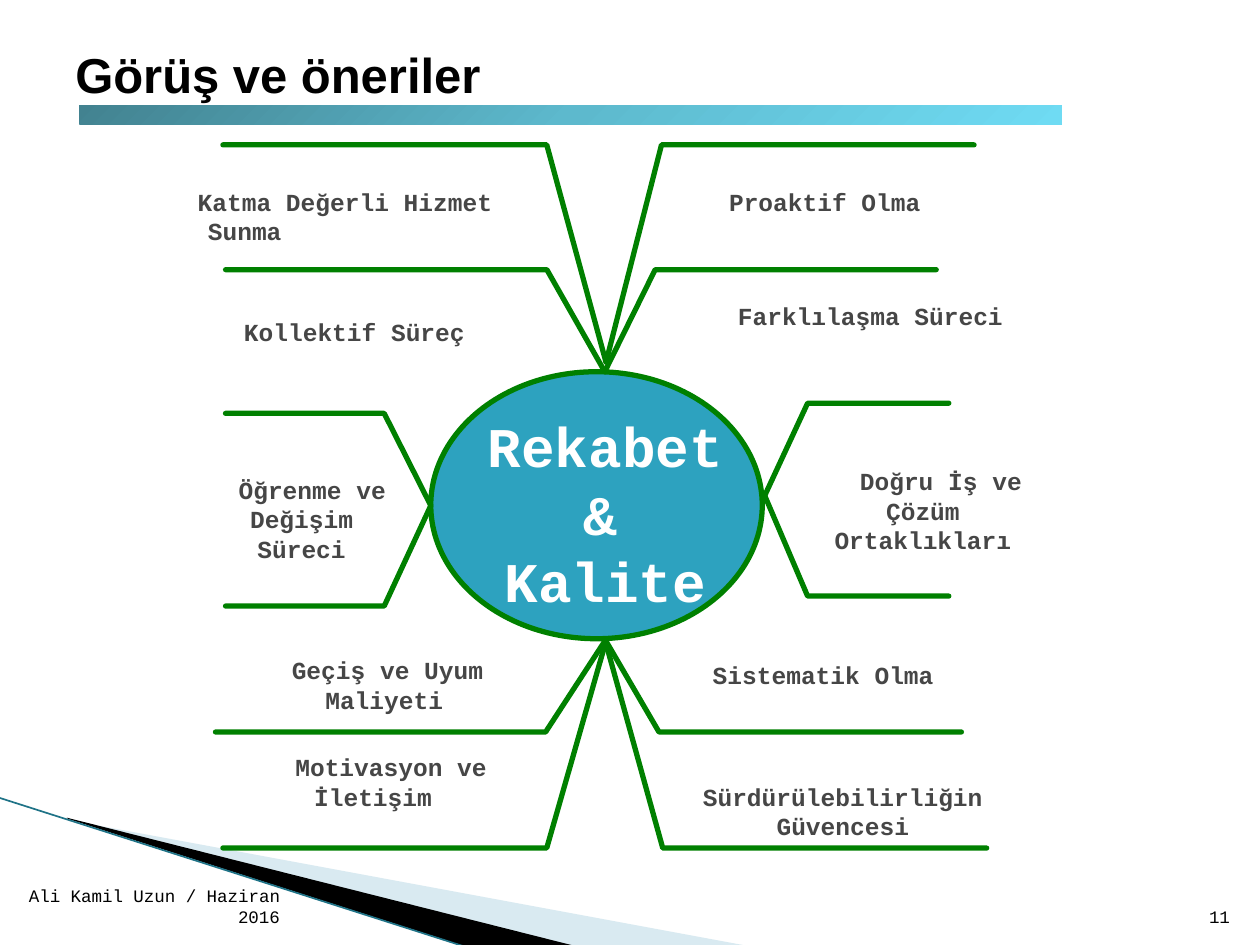
from copy import deepcopy

from pptx import Presentation
from pptx.dml.color import RGBColor
from pptx.enum.shapes import MSO_CONNECTOR, MSO_SHAPE
from pptx.enum.text import MSO_ANCHOR, PP_ALIGN
from pptx.oxml.ns import qn
from pptx.util import Pt
from lxml import etree

GREEN = "008000"
MONO = "Courier New"
HANGING = 13
LEFT, CENTER, RIGHT = PP_ALIGN.LEFT, PP_ALIGN.CENTER, PP_ALIGN.RIGHT

# Point at the hub, elbow, outer end of the horizontal arm
BRANCHES = [
    ((346.3, 206.9), (312.5, 82.8), 127.4),
    ((346.3, 206.9), (378, 82.8), 556.6),
    ((345.6, 212.4), (312.5, 154.1), 128.9),
    ((345.6, 212.4), (374.4, 154.1), 535),
    ((246.2, 288.9), (219.6, 236.2), 128.9),
    ((246.2, 288.9), (219.6, 346.3), 128.9),
    ((437, 283.2), (461.5, 230.4), 542.2),
    ((437, 283.2), (461.5, 340.6), 542.2),
    ((346, 365.8), (311.8, 418.3), 123.1),
    ((346, 365.8), (376.6, 418.3), 549.4),
    ((346.3, 366.5), (312.5, 484.6), 127.4),
    ((346.3, 367.9), (378.7, 484.6), 563.8),
]

# Text, box, alignment, start of the first line
LABELS = [
    ("Katma Değerli Hizmet Sunma", (105.8, 106.6, 222.5, 31.7), LEFT, 7.2),
    ("Proaktif Olma", (408.2, 106.6, 200.9, 31.7), LEFT, 8.4),
    ("Kollektif Süreç", (131, 181.4, 200.9, 31.7), LEFT, 8.4),
    ("Farklılaşma Süreci", (386.6, 172.1, 196.6, 26.6), CENTER, 25.2),
    ("Öğrenme ve\vDeğişim Süreci", (105.8, 271.4, 120.2, 26.6), CENTER, 25.2),
    ("Doğru İş ve Çözüm Ortaklıkları", (443.5, 266.4, 154.8, 35.3), CENTER, 33.6),
    ("Geçiş ve Uyum\vMaliyeti", (105.8, 374.4, 214.6, 26.6), CENTER, 16.8),
    ("Sistematik Olma", (398.9, 377.3, 187.2, 26.6), LEFT, 8.4),
    ("Motivasyon ve İletişim", (99.4, 429.8, 214.6, 26.6), CENTER, 33.6),
    ("Sürdürülebilirliğin Güvencesi", (381.6, 446.6, 187.2, 26.6), CENTER, HANGING),
]


def color(hex_string):
    return RGBColor.from_string(hex_string)


def add_text(slide, text, box, size, font=MONO, hex_color="000000", bold=False,
             align=LEFT, anchor=MSO_ANCHOR.TOP, insets=(7.2, 3.6, 7.2, 3.6)):
    shape = slide.shapes.add_textbox(*map(Pt, box))
    frame = shape.text_frame
    frame.word_wrap = True
    frame.vertical_anchor = anchor
    frame.margin_left, frame.margin_top, frame.margin_right, frame.margin_bottom = map(Pt, insets)
    frame.text = text
    for paragraph in frame.paragraphs:
        paragraph.alignment = align
        for run in paragraph.runs:
            run.font.name = font
            run.font.size = Pt(size)
            run.font.bold = bold
            run.font.color.rgb = color(hex_color)
    return shape


def add_label(slide, text, box, align, first_start, size=14, hex_color="464646"):
    """Bold text whose first line starts apart from the hanging lines."""
    shape = add_text(slide, text, box, size, hex_color=hex_color, bold=True,
                     align=align, insets=(0, 0, 0, 0))
    for paragraph in shape.text_frame.paragraphs:
        properties = paragraph._p.get_or_add_pPr()
        properties.set("marL", str(Pt(HANGING)))
        properties.set("indent", str(Pt(first_start - HANGING)))


def add_freeform(slide, points, close):
    start, *others = [(Pt(x), Pt(y)) for x, y in points]
    builder = slide.shapes.build_freeform(*start, scale=1.0)
    builder.add_line_segments(others, close=close)
    shape = builder.convert_to_shape()
    shape.shadow.inherit = False
    return shape


def add_polygon(slide, points, hex_color, opacity=100):
    shape = add_freeform(slide, points, True)
    shape.fill.solid()
    shape.fill.fore_color.rgb = color(hex_color)
    shape.line.fill.background()
    if opacity < 100:
        rgb = shape._element.spPr.find(qn("a:solidFill"))[0]
        etree.SubElement(rgb, qn("a:alpha")).set("val", str(opacity * 1000))


def set_outline(shape):
    shape.line.color.rgb = color(GREEN)
    shape.line.width = Pt(3)


def add_branch(slide, hub, elbow, end_x):
    shape = add_freeform(slide, [hub, elbow, (end_x, elbow[1])], False)
    shape.fill.background()
    set_outline(shape)
    line = shape.line._get_or_add_ln()
    line.set("cap", "rnd")
    etree.SubElement(line, qn("a:round"))


def add_hub(slide):
    shape = slide.shapes.add_shape(MSO_SHAPE.OVAL, Pt(246.2), Pt(212.4), Pt(189.4), Pt(152.6))
    shape.shadow.inherit = False
    shape.fill.solid()
    shape.fill.fore_color.rgb = color("2DA2BF")
    set_outline(shape)


def add_gradient_bar(slide):
    shape = slide.shapes.add_shape(MSO_SHAPE.RECTANGLE, Pt(45.2), Pt(60.2), Pt(561.6), Pt(10.8))
    shape.shadow.inherit = False
    shape.line.fill.background()
    shape.fill.gradient()
    shape.fill.gradient_angle = 315
    stop_list = shape._element.spPr.find(qn("a:gradFill")).find(qn("a:gsLst"))
    stop_list.insert(1, deepcopy(stop_list[0]))
    stops = zip(shape.fill.gradient_stops, (0, 0.5, 1), ("428290", "5DB9CD", "6FDBF3"))
    for stop, position, hex_color in stops:
        stop.position = position
        stop.color.rgb = color(hex_color)


def add_corner_decoration(slide):
    add_polygon(slide, [(39.6, 468.7), (428.4, 540.7), (328.3, 540.7), (39.6, 468)], "A0CBDC", 40)
    add_polygon(slide, [(38.2, 467.3), (329, 540.7), (267.8, 541.4), (38.9, 468)], "000000")
    line = slide.shapes.add_connector(
        MSO_CONNECTOR.STRAIGHT, Pt(-0.7), Pt(455.8), Pt(267.1), Pt(541.4))
    line.line.color.rgb = color("1F7387")
    line.line.width = Pt(0.95)
    etree.SubElement(line._element.spPr, qn("a:effectLst"))


def main():
    presentation = Presentation()
    presentation.slide_width, presentation.slide_height = Pt(720), Pt(540)
    slide = presentation.slides.add_slide(presentation.slide_layouts[6])

    add_corner_decoration(slide)
    for text, left, width in (("Ali Kamil Uzun / Haziran 2016", 0, 167), ("11", 681.1, 28.8)):
        add_text(slide, text, (left, 504.7, width, 28.8), 10, align=RIGHT,
                 anchor=MSO_ANCHOR.BOTTOM)
    add_text(slide, "Görüş ve öneriler", (36, 21.6, 648, 90), 28, font="Arial", bold=True)
    add_gradient_bar(slide)
    add_hub(slide)
    for branch in BRANCHES:
        add_branch(slide, *branch)
    for label in LABELS:
        add_label(slide, *label)
    add_label(slide, "Rekabet & \nKalite", (270.7, 235.4, 150.5, 61.9), CENTER, 0,
              size=32, hex_color="FFFFFF")
    presentation.save("out.pptx")


if __name__ == "__main__":
    main()
